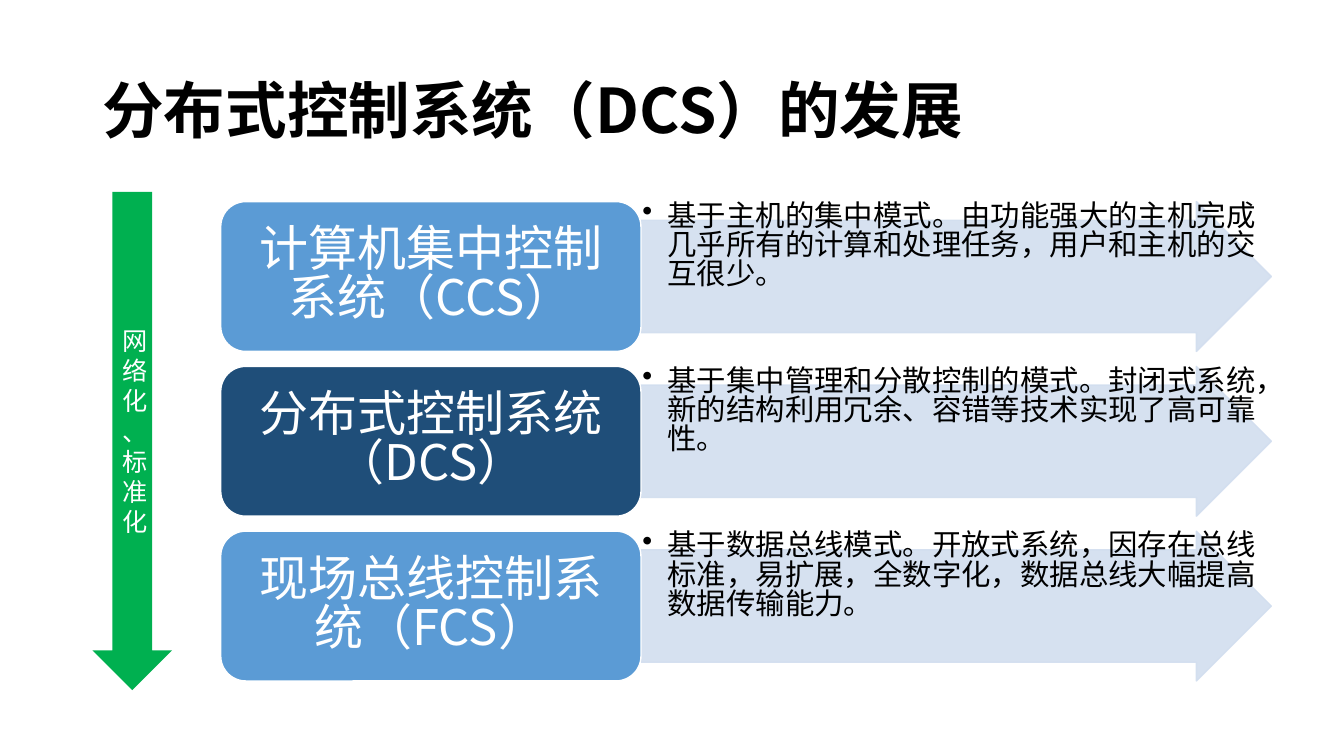
from dataclasses import dataclass

import pptx
import pptx.dml.color
import pptx.enum.shapes
import pptx.enum.text
import pptx.oxml
import pptx.oxml.ns
import pptx.util
from lxml import etree

Pt = pptx.util.Pt
RGBColor = pptx.dml.color.RGBColor
Preset = pptx.enum.shapes.MSO_SHAPE
Align = pptx.enum.text.PP_ALIGN
Anchor = pptx.enum.text.MSO_ANCHOR
qn = pptx.oxml.ns.qn

FONT = "Noto Sans CJK SC"
BLACK = RGBColor(0x00, 0x00, 0x00)
WHITE = RGBColor(0xFF, 0xFF, 0xFF)
BLUE = RGBColor(0x5B, 0x9B, 0xD5)
NAVY = RGBColor(0x1F, 0x4E, 0x79)
PALE_BLUE = RGBColor(0xD2, 0xDE, 0xEF)
GREEN = RGBColor(0x00, 0xB0, 0x50)

STAGE_TOP = 144
STAGE_PITCH = 117.7
STAGE_HEIGHT = 107
LABEL_LEFT = 157.7
LABEL_WIDTH = 300.2
ARROW_LEFT = LABEL_LEFT + LABEL_WIDTH
ARROW_WIDTH = 450.2


@dataclass(frozen=True)
class Box:
    left: float
    top: float
    width: float
    height: float

    def lengths(self) -> tuple:
        return Pt(self.left), Pt(self.top), Pt(self.width), Pt(self.height)


@dataclass(frozen=True)
class Stage:
    name: str
    description: str
    color: RGBColor


STAGES = [
    Stage("计算机集中控制系统（CCS）",
          "基于主机的集中模式。由功能强大的主机完成几乎所有的计算和处理任务，用户和主机的交互很少。", BLUE),
    Stage("分布式控制系统（DCS）",
          "基于集中管理和分散控制的模式。封闭式系统，新的结构利用冗余、容错等技术实现了高可靠性。", NAVY),
    Stage("现场总线控制系统（FCS）",
          "基于数据总线模式。开放式系统，因存在总线标准，易扩展，全数字化，数据总线大幅提高数据传输能力。", BLUE),
]


def write_text(shape, text: str, size: float, color: RGBColor, align=Align.LEFT,
               anchor=Anchor.MIDDLE, inset_x: float = 7.2, inset_y: float = 3.6,
               spacing: float = 1.0, bold: bool = False):
    frame = shape.text_frame
    frame.word_wrap = True
    frame.vertical_anchor = anchor
    frame.margin_left = frame.margin_right = Pt(inset_x)
    frame.margin_top = frame.margin_bottom = Pt(inset_y)
    paragraph = frame.paragraphs[0]
    paragraph.text = text
    paragraph.alignment = align
    paragraph.line_spacing = spacing
    font = paragraph.font
    font.size = Pt(size)
    font.bold = bold
    font.color.rgb = color
    font.name = FONT
    properties = paragraph._p.get_or_add_pPr().find(qn("a:defRPr"))
    etree.SubElement(properties, qn("a:ea"), typeface=FONT)
    return paragraph


def add_bullet(paragraph, indent: float) -> None:
    properties = paragraph._p.get_or_add_pPr()
    properties.set("marL", str(Pt(indent)))
    properties.set("indent", str(-Pt(indent)))
    bullet = etree.Element(qn("a:buChar"), char="•")
    properties.find(qn("a:defRPr")).addprevious(bullet)


def add_preset(slide, preset, box: Box, fill: RGBColor, line: RGBColor | None = None):
    shape = slide.shapes.add_shape(preset, *box.lengths())
    shape.shadow.inherit = False
    shape.fill.solid()
    shape.fill.fore_color.rgb = fill
    if line is None:
        shape.line.fill.background()
    else:
        shape.line.color.rgb = line
        shape.line.width = Pt(1)
    return shape


def add_stage(slide, stage: Stage, top: float) -> None:
    arrow_box = Box(ARROW_LEFT, top, ARROW_WIDTH, STAGE_HEIGHT)
    arrow = add_preset(slide, Preset.RIGHT_ARROW, arrow_box, PALE_BLUE, PALE_BLUE)
    arrow.adjustments[0] = 0.75
    arrow.adjustments[1] = 0.5
    for color in arrow._element.spPr.iter(qn("a:srgbClr")):
        etree.SubElement(color, qn("a:alpha"), val="90000")

    description = slide.shapes.add_textbox(*arrow_box.lengths())
    paragraph = write_text(description, stage.description, 21, BLACK, anchor=Anchor.TOP,
                           inset_x=0.9, inset_y=0.9, spacing=0.83)
    add_bullet(paragraph, 18)

    label_box = Box(LABEL_LEFT, top, LABEL_WIDTH, STAGE_HEIGHT)
    label = add_preset(slide, Preset.ROUNDED_RECTANGLE, label_box, stage.color, WHITE)
    write_text(label, stage.name, 35, WHITE, Align.CENTER,
               inset_x=5.6, inset_y=0, spacing=0.83)


def main() -> None:
    presentation = pptx.Presentation()
    presentation.slide_width = Pt(960)
    presentation.slide_height = Pt(540)
    slide = presentation.slides.add_slide(presentation.slide_layouts[6])

    title = slide.shapes.add_textbox(*Box(66, 28.75, 828, 104.4).lengths())
    write_text(title, "分布式控制系统（DCS）的发展", 44, BLACK, spacing=0.9, bold=True)

    for index, stage in enumerate(STAGES):
        add_stage(slide, stage, STAGE_TOP + index * STAGE_PITCH)

    trend = add_preset(slide, Preset.DOWN_ARROW, Box(66, 137, 57, 356), GREEN)
    write_text(trend, "网络化、标准化", 18, WHITE, Align.CENTER)

    presentation.save("out.pptx")


if __name__ == "__main__":
    main()
